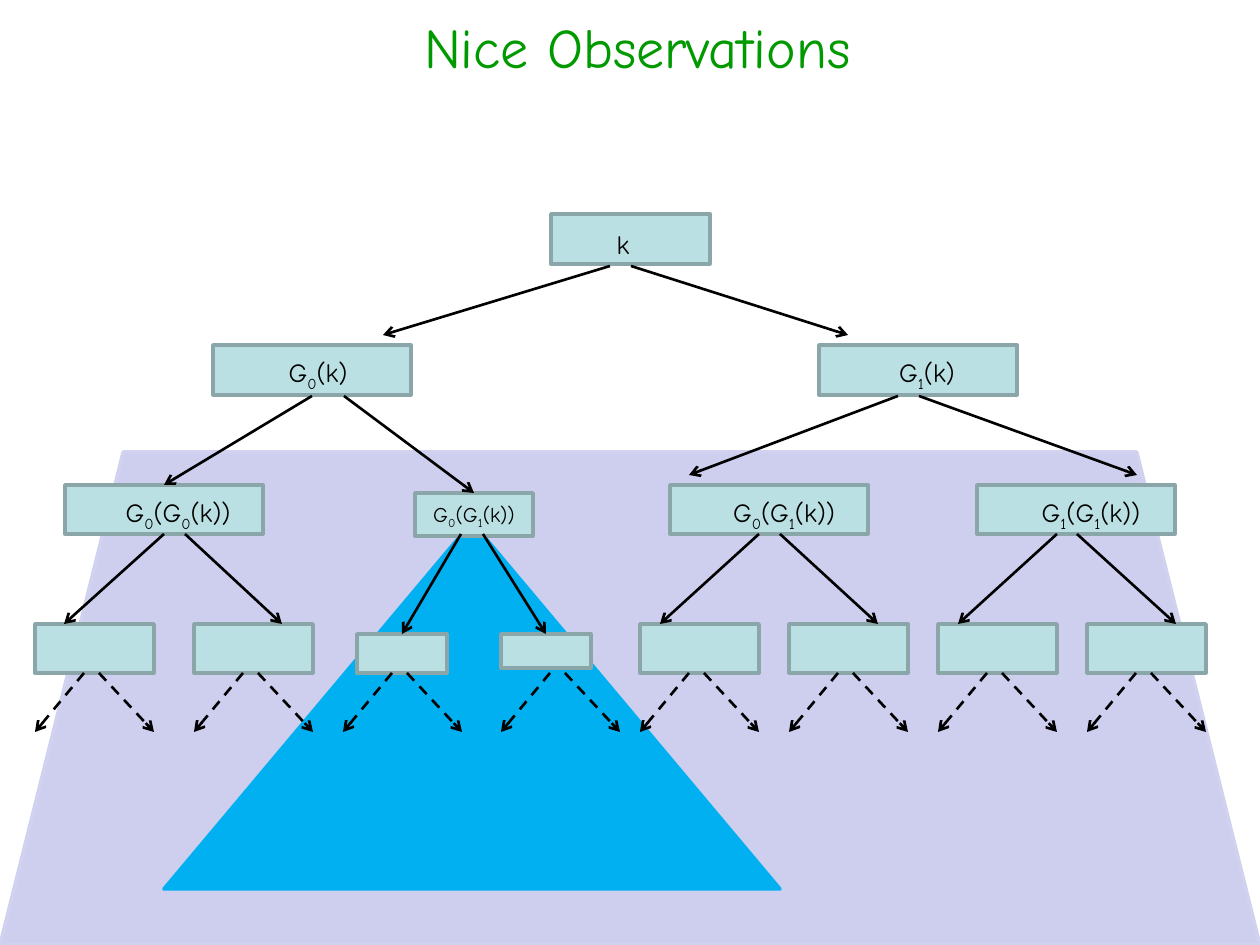
import itertools

import lxml.etree
import pptx
import pptx.dml.color
import pptx.enum.dml
import pptx.enum.shapes
import pptx.enum.text
import pptx.oxml.ns
import pptx.util

PX = 914400 / 126
FONT = "Comic Neue"
SHAPE = pptx.enum.shapes.MSO_SHAPE


def px(*lengths):
    return [pptx.util.Emu(round(length * PX)) for length in lengths]


def color(hex_string):
    return pptx.dml.color.RGBColor.from_string(hex_string)


deck = pptx.Presentation()
deck.slide_width, deck.slide_height = px(1260, 945)
slide = deck.slides.add_slide(deck.slide_layouts[5])

# Title
title = slide.shapes.title
title.left, title.top, title.width, title.height = px(20, 6, 1235, 69)
title.text_frame.text = "Nice Observations"
title.text_frame.auto_size = pptx.enum.text.MSO_AUTO_SIZE.NONE
title.text_frame.vertical_anchor = pptx.enum.text.MSO_ANCHOR.TOP
heading = title.text_frame.paragraphs[0]
heading.alignment = pptx.enum.text.PP_ALIGN.CENTER
heading.font.name = FONT
heading.font.size = pptx.util.Pt(32)
heading.font.color.rgb = color("009900")

# Tree nodes: label, label size, label box (left, top, width), rectangle
nodes = [
    ("k", 15, (544, 222, 158), (551, 214, 159, 50)),
    ("G0(k)", 15, (219, 350, 198), (213, 345, 198, 50)),
    ("G1(k)", 15, (828, 350, 198), (819, 345, 198, 50)),
    ("G0(G0(k))", 15, (54, 490, 248), (65, 485, 198, 49)),
    ("G0(G1(k))", 12, (387, 495, 174), (415, 493, 118, 43)),
    ("G0(G1(k))", 15, (660, 490, 248), (670, 485, 198, 49)),
    ("G1(G1(k))", 15, (967, 490, 248), (977, 485, 198, 49)),
]
leaf_lefts = [35, 194] + [640 + 149 * i for i in range(4)]
leaves = [(left, 624, 119, 49) for left in leaf_lefts]
leaves += [(357, 634, 90, 39), (501, 634, 90, 34)]

# Background areas, then all rectangles
blocks = [
    (SHAPE.TRAPEZOID, (0, 452, 1260, 493), "CECEEF", "D1D1F0"),
    (SHAPE.ISOSCELES_TRIANGLE, (164, 522, 616, 367), "00B0F0", "00B0F0"),
]
blocks += [(SHAPE.RECTANGLE, bounds, "BBE0E3", "8AA6A8")
           for bounds in leaves + [node[3] for node in nodes]]
for kind, bounds, fill, outline in blocks:
    block = slide.shapes.add_shape(kind, *px(*bounds))
    block.shadow.inherit = False
    block.fill.solid()
    block.fill.fore_color.rgb = color(fill)
    block.line.color.rgb = color(outline)
    block.line.width = pptx.util.Pt(2)

# Node labels, with digits as subscripts
for text, size, (left, top, width), _ in nodes:
    label = slide.shapes.add_textbox(*px(left, top, width, 44)).text_frame
    label.word_wrap = True
    formula = label.paragraphs[0]
    formula.alignment = pptx.enum.text.PP_ALIGN.CENTER
    formula.font.name = FONT
    formula.font.size = pptx.util.Pt(size)
    formula.font.color.rgb = color("000000")
    for is_index, characters in itertools.groupby(text, str.isdigit):
        run = formula.add_run()
        run.text = "".join(characters)
        if is_index:
            run.font._element.set("baseline", "-25000")

# Solid arrows: start y, left and right start x, left and right tip
branches = [
    (266, 610, 631, (383, 335), (848, 335)),
    (396, 312, 344, (164, 485), (474, 493)),
    (396, 898, 919, (689, 475), (1137, 475)),
    (534, 164, 185, (64, 624), (282, 624)),
    (534, 461, 483, (402, 634), (546, 634)),
    (534, 759, 780, (660, 624), (878, 624)),
    (534, 1057, 1077, (958, 624), (1176, 624)),
]
arrows = []
for y, left_x, right_x, left_tip, right_tip in branches:
    arrows += [(left_x, y, *left_tip, False), (right_x, y, *right_tip, False)]

# Dashed arrows below the leaves
for left in leaf_lefts + [343, 501]:
    arrows += [(left + 49, 673, left, 732, True),
               (left + 64, 673, left + 119, 732, True)]

for *ends, dashed in arrows:
    arrow = slide.shapes.add_connector(
        pptx.enum.shapes.MSO_CONNECTOR.STRAIGHT, *px(*ends))
    arrow.line.color.rgb = color("000000")
    arrow.line.width = pptx.util.Pt(1.5)
    if dashed:
        arrow.line.dash_style = pptx.enum.dml.MSO_LINE.DASH
    lxml.etree.SubElement(arrow.line._get_or_add_ln(),
                          pptx.oxml.ns.qn("a:tailEnd"), type="arrow")
    lxml.etree.SubElement(arrow._element.spPr, pptx.oxml.ns.qn("a:effectLst"))

deck.save("out.pptx")
